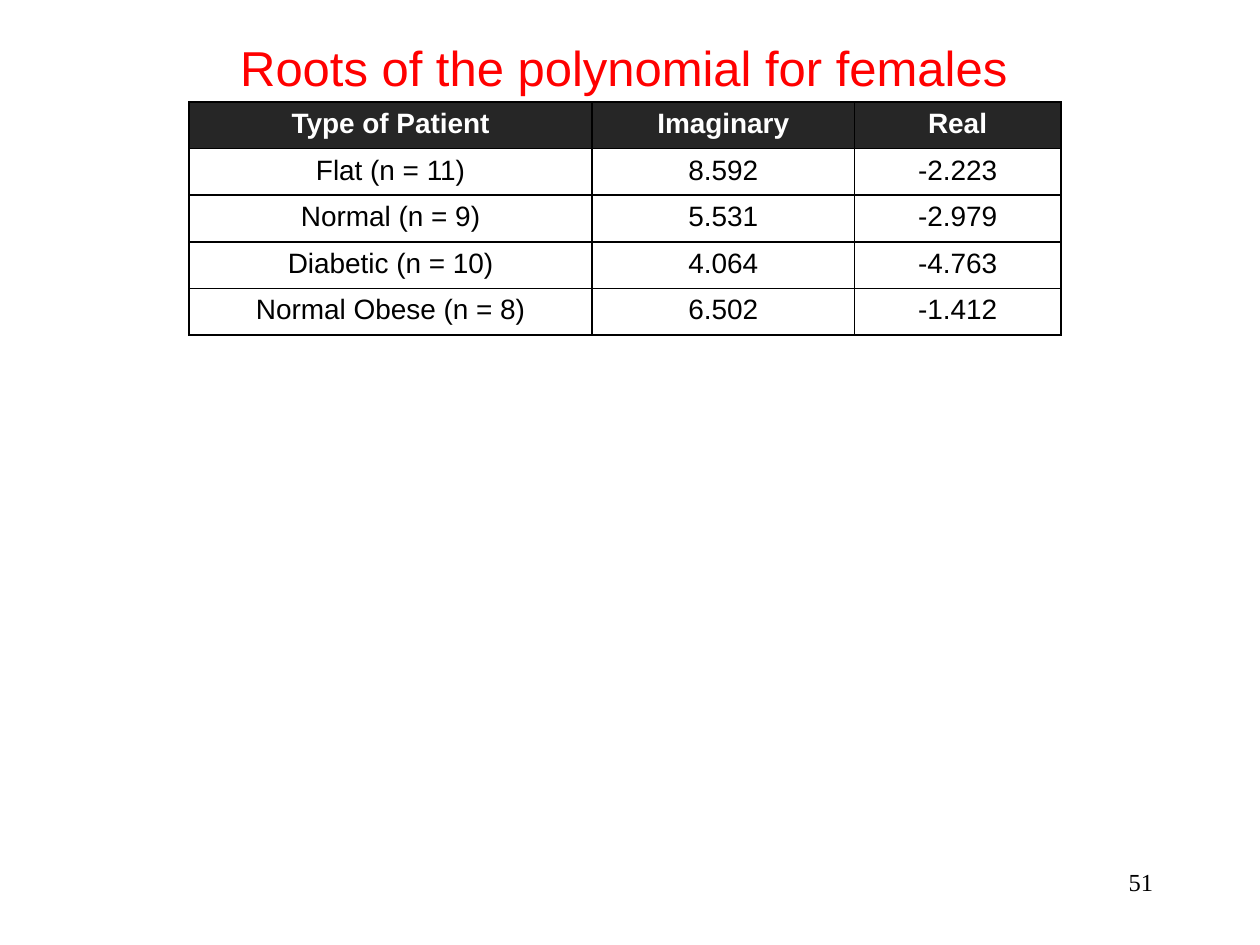
from lxml.etree import SubElement
from pptx import Presentation
from pptx.dml.color import RGBColor
from pptx.enum.text import MSO_ANCHOR, PP_ALIGN as Align
from pptx.oxml.ns import qn
from pptx.util import Inches, Pt

WIDTH, HEIGHT = Inches(10), Inches(7.5)
BLACK = RGBColor(0x00, 0x00, 0x00)
WHITE = RGBColor(0xFF, 0xFF, 0xFF)
RED = RGBColor(0xFF, 0x00, 0x00)
CHARCOAL = RGBColor(0x26, 0x26, 0x26)

COLUMN_WIDTHS = (3.2, 2.08, 1.64)
ROW_HEIGHT = 0.37
ROOTS = (
    ("Type of Patient", "Imaginary", "Real"),
    ("Flat (n = 11)", "8.592", "-2.223"),
    ("Normal (n = 9)", "5.531", "-2.979"),
    ("Diabetic (n = 10)", "4.064", "-4.763"),
    ("Normal Obese (n = 8)", "6.502", "-1.412"),
)


def write(frame, text, size, color, font="Arial", align=Align.CENTER, bold=False):
    para = frame.paragraphs[0]
    para.alignment = align
    span = para.add_run()
    span.text = text
    span.font.name = font
    span.font.size = Pt(size)
    span.font.bold = bold
    span.font.color.rgb = color


def add_text(page, left, top, width, height, text, size, color, **style):
    box = page.shapes.add_textbox(*map(Inches, (left, top, width, height)))
    box.text_frame.word_wrap = True
    write(box.text_frame, text, size, color, **style)
    return box


def outline(cell):
    """Draw a thin black line on all four sides of a cell, under its fill."""
    properties = cell._tc.get_or_add_tcPr()
    for position, side in enumerate(("lnL", "lnR", "lnT", "lnB")):
        line = SubElement(properties, qn(f"a:{side}"), w=str(Pt(1)))
        properties.insert(position, line)
        fill = SubElement(line, qn("a:solidFill"))
        SubElement(fill, qn("a:srgbClr"), val=str(BLACK))


def add_roots_table(page, left, top):
    size = sum(COLUMN_WIDTHS), ROW_HEIGHT * len(ROOTS)
    frame = page.shapes.add_table(
        len(ROOTS), len(COLUMN_WIDTHS), *map(Inches, (left, top, *size)))
    table = frame.table
    table.horz_banding = False
    for column, width in zip(table.columns, COLUMN_WIDTHS):
        column.width = Inches(width)
    for row, values in enumerate(ROOTS):
        header = row == 0
        table.rows[row].height = Inches(ROW_HEIGHT)
        for column, value in enumerate(values):
            cell = table.cell(row, column)
            cell.vertical_anchor = MSO_ANCHOR.TOP
            cell.fill.solid()
            cell.fill.fore_color.rgb = CHARCOAL if header else WHITE
            outline(cell)
            write(cell.text_frame, value, 16, WHITE if header else BLACK, bold=header)


def main():
    deck = Presentation()
    deck.slide_width, deck.slide_height = WIDTH, HEIGHT
    page = deck.slides.add_slide(deck.slide_layouts[6])
    title = add_text(page, 0.73, 0.23, 8.44, 0.88,
                     "Roots of the polynomial for females", 28, RED)
    title.text_frame.margin_top = Inches(0.07)
    add_roots_table(page, 1.5, 0.81)
    add_text(page, 7.17, 6.83, 2.08, 0.5, "51", 14, BLACK,
             font="Times New Roman", align=Align.RIGHT)
    deck.save("out.pptx")


if __name__ == "__main__":
    main()
